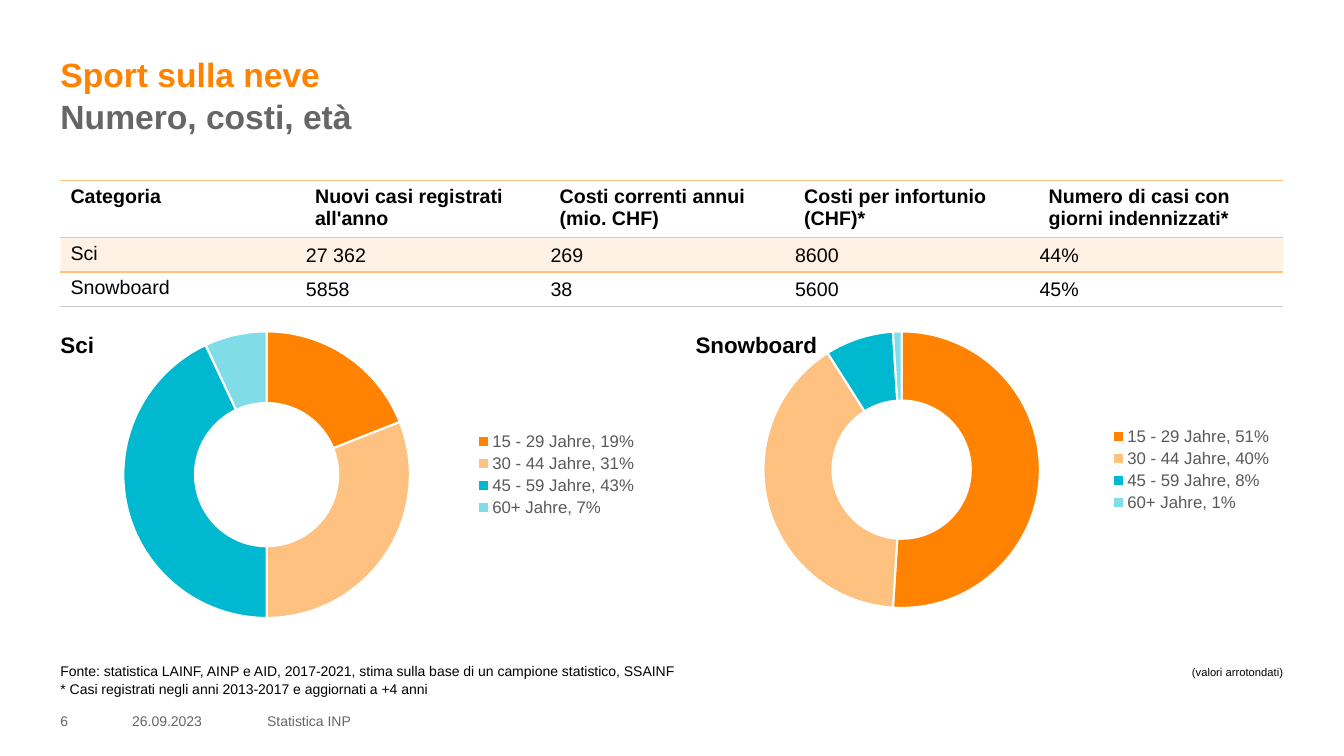
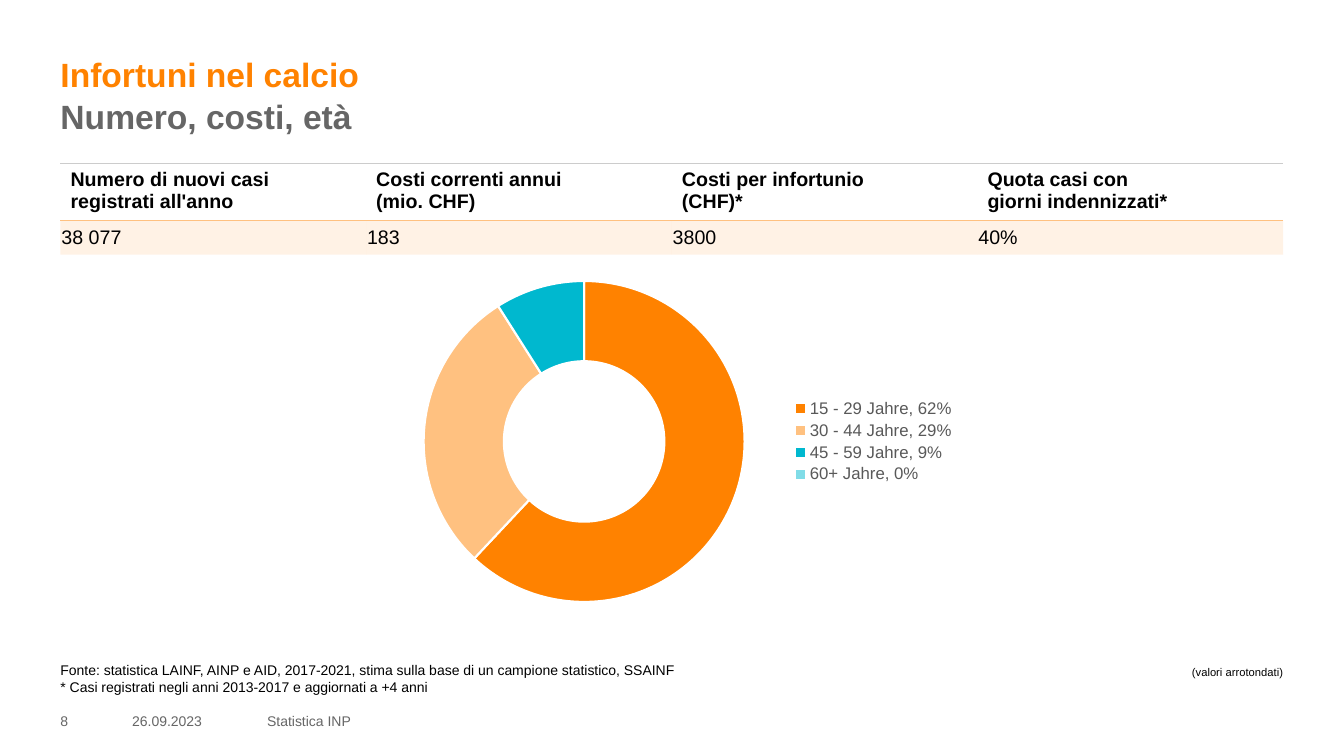
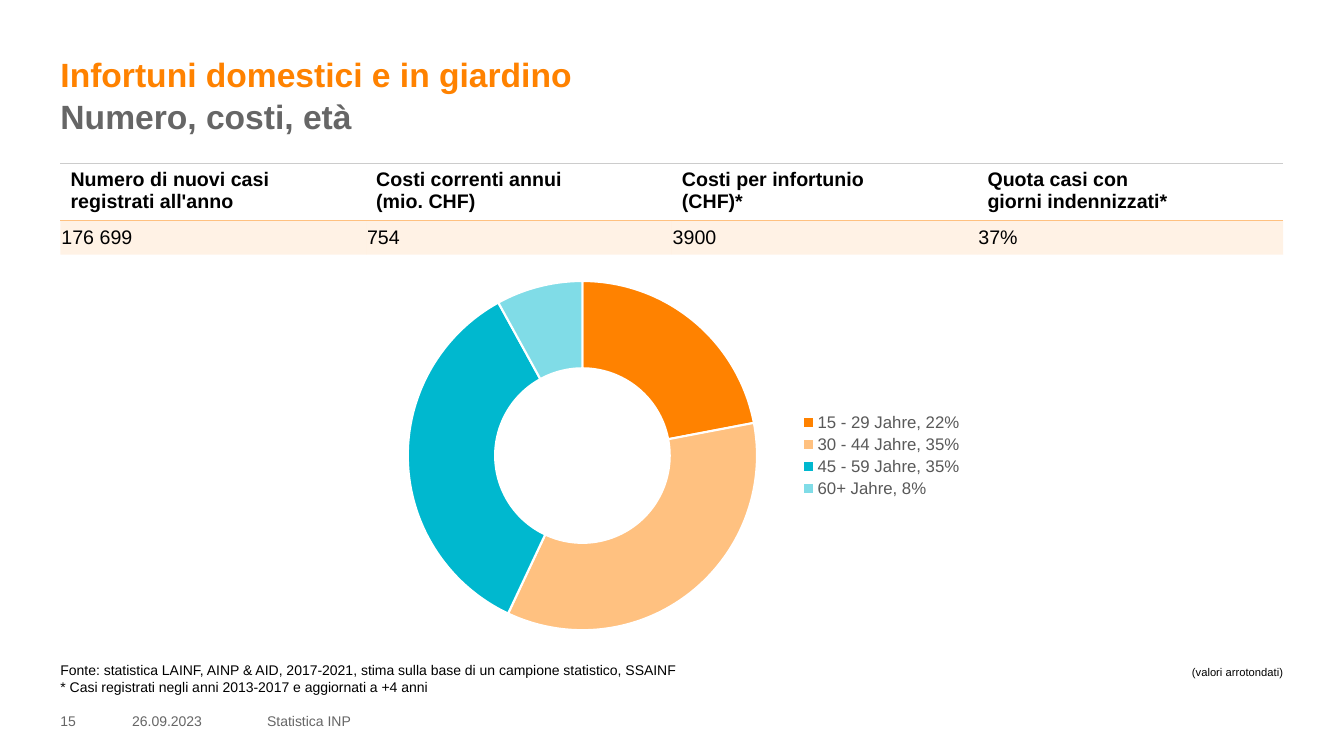
from lxml import etree
from pptx import Presentation
from pptx.chart.data import CategoryChartData
from pptx.dml.color import RGBColor
from pptx.enum.chart import XL_CHART_TYPE, XL_LEGEND_POSITION
from pptx.enum.text import MSO_ANCHOR, MSO_AUTO_SIZE, PP_ALIGN
from pptx.oxml.ns import qn
from pptx.util import Pt


def rgb(hex_color):
    return RGBColor.from_string(hex_color)


class Deck:
    FONT = "Arial"
    ORANGE, PEACH, TEAL, AQUA = "FF8200", "FFC180", "00B8CF", "80DCE7"
    BLACK, GREY, LEGEND_GREY = "000000", "666666", "595959"
    WHITE, RULE_GREY = "FFFFFF", "CCCCCC"
    LEFT, WIDTH = 43.2, 873.4
    HEADER_HEIGHT, ROW_HEIGHT = 39.4, 24.5
    AGES = ("15 - 29", "30 - 44", "45 - 59", "60+")

    def __init__(self):
        self.prs = Presentation()
        self.prs.slide_width, self.prs.slide_height = Pt(960), Pt(540)
        self.slide = None

    def font(self, font, size, color, bold=False):
        font.name, font.size, font.bold = self.FONT, Pt(size), bold
        font.color.rgb = rgb(color)

    def frame(self, frame, inset=(0, 0), anchor=MSO_ANCHOR.TOP, wrap=True):
        frame.margin_left = frame.margin_right = Pt(inset[0])
        frame.margin_top = frame.margin_bottom = Pt(inset[1])
        frame.vertical_anchor = anchor
        frame.word_wrap = wrap

    def place(self, shape, left, top, width, height):
        shape.left, shape.top = Pt(left), Pt(top)
        shape.width, shape.height = Pt(width), Pt(height)

    def new_slide(self, topic, number):
        """Start a slide with its title and footer."""
        self.slide = self.prs.slides.add_slide(self.prs.slide_layouts[5])
        title = self.slide.shapes.title
        self.place(title, self.LEFT, 37.5, self.WIDTH, 67.7)
        self.frame(title.text_frame)
        title.text_frame.auto_size = MSO_AUTO_SIZE.NONE
        title.text_frame.text = f"{topic}\vNumero, costi, età"
        heading = title.text_frame.paragraphs[0]
        heading.alignment, heading.line_spacing = PP_ALIGN.LEFT, 1.04
        for run, color in zip(heading.runs, (self.ORANGE, self.GREY)):
            self.font(run.font, 24, color, True)

        # Footer: page, date, subject
        for text, left, width in ((str(number), self.LEFT, 39.6),
                                  ("26.09.2023", 94.4, 85),
                                  ("Statistica INP", 190.8, 617.8)):
            self.text(text, left, 507.6, width, 14.4, color=self.GREY,
                      anchor=MSO_ANCHOR.MIDDLE)

    def text(self, text, left, top, width, height, size=10, color=BLACK, bold=False,
             align=PP_ALIGN.LEFT, spacing=1.0, **frame_style):
        box = self.slide.shapes.add_textbox(Pt(left), Pt(top), Pt(width), Pt(height))
        self.frame(box.text_frame, **frame_style)
        box.text_frame.text = text
        for paragraph in box.text_frame.paragraphs:
            paragraph.alignment, paragraph.line_spacing = align, spacing
            for run in paragraph.runs:
                self.font(run.font, size, color, bold)

    def source_lines(self, insurers, top):
        """Source lines and the rounding remark."""
        self.text(f"Fonte: statistica LAINF, {insurers}, 2017-2021, stima sulla base di un "
                  "campione statistico, SSAINF\n"
                  "* Casi registrati negli anni 2013-2017 e aggiornati a +4 anni",
                  self.LEFT, top, self.WIDTH, 30, spacing=1.05)
        self.text("(valori arrotondati)", 843.1, 471.6, 80.6, 17.3, size=8,
                  align=PP_ALIGN.RIGHT, inset=(7.2, 3.6), wrap=False)

    def border(self, cell, side, position, color):
        line = etree.Element(qn(f"a:{side}"), w=str(int(Pt(1))))
        if color:
            fill = etree.SubElement(line, qn("a:solidFill"))
            etree.SubElement(fill, qn("a:srgbClr"), val=color)
        else:
            etree.SubElement(line, qn("a:noFill"))
        cell._tc.get_or_add_tcPr().insert(position, line)

    def table(self, top, rows, rules):
        """Rules are the colours of the horizontal lines, from the top down."""
        columns = len(rows[0])
        height = self.HEADER_HEIGHT + self.ROW_HEIGHT * (len(rows) - 1)
        table = self.slide.shapes.add_table(
            len(rows), columns, Pt(self.LEFT), Pt(top), Pt(self.WIDTH), Pt(height)).table
        table.first_row = table.horz_banding = False
        for column in table.columns:
            column.width = Pt(self.WIDTH / columns)
        for r, row in enumerate(rows):
            table.rows[r].height = Pt(self.ROW_HEIGHT if r else self.HEADER_HEIGHT)
            for c, text in enumerate(row):
                self.cell(table.cell(r, c), text, r, rules[r:r + 2])

    def cell(self, cell, text, row, rules):
        is_value = text[0].isdigit()
        cell.margin_left = cell.margin_right = Pt(0.7 if is_value else 7.2)
        cell.margin_top = Pt(0.7 if is_value else 3.6)
        cell.margin_bottom = Pt(0 if is_value else 3.6)
        cell.vertical_anchor = MSO_ANCHOR.MIDDLE if is_value else MSO_ANCHOR.TOP
        cell.text_frame.text = text
        for run in cell.text_frame.paragraphs[0].runs:
            self.font(run.font, 14, self.BLACK, row == 0)

        # White header, tinted odd rows, clear even rows
        if row and row % 2 == 0:
            cell.fill.background()
        else:
            cell.fill.solid()
            cell.fill.fore_color.rgb = rgb(self.PEACH if row else self.WHITE)
            if row:
                tint = cell._tc.tcPr.find(".//" + qn("a:srgbClr"))
                etree.SubElement(tint, qn("a:alpha"), val="20000")
        for position, (side, color) in enumerate(
                zip(("lnL", "lnR", "lnT", "lnB"), (None, None, *rules))):
            self.border(cell, side, position, color)

    def age_chart(self, shares, left, top, width, height):
        data = CategoryChartData()
        data.categories = [f"{age} Jahre, {share}%" for age, share in zip(self.AGES, shares)]
        data.add_series("Series 1", shares)
        chart = self.slide.shapes.add_chart(
            XL_CHART_TYPE.DOUGHNUT, Pt(left), Pt(top), Pt(width), Pt(height), data).chart
        self.font(chart.font, 10, self.BLACK)
        chart.has_title = False
        chart.has_legend = True
        chart.legend.position = XL_LEGEND_POSITION.RIGHT
        chart.legend.include_in_layout = False
        self.font(chart.legend.font, 12, self.LEGEND_GREY)
        ring = chart.plots[0]
        ring.vary_by_categories = True
        ring._element.find(qn("c:holeSize")).set("val", "55")
        for i, color in enumerate((self.ORANGE, self.PEACH, self.TEAL, self.AQUA)):
            slice_format = ring.series[0].points[i].format
            slice_format.fill.solid()
            slice_format.fill.fore_color.rgb = rgb(color)
            slice_format.line.color.rgb = rgb(self.WHITE)
            slice_format.line.width = Pt(1.5)


def snow_sports(deck):
    deck.new_slide("Sport sulla neve", 6)
    for sport, shares, left, height in (("Sci", (19, 31, 43, 7), deck.LEFT, 224.6),
                                        ("Snowboard", (51, 40, 8, 1), 496.8, 217.4)):
        deck.age_chart(shares, left, 226.8, 419.8, height)
        deck.text(sport, left, 236.2, 414, 51, size=16, bold=True)
    deck.table(128.9, (
        ("Categoria", "Nuovi casi registrati all'anno", "Costi correnti annui (mio. CHF)",
         "Costi per infortunio (CHF)*", "Numero di casi con giorni indennizzati*"),
        ("Sci", "27 362", "269", "8600", "44%"),
        ("Snowboard", "5858", "38", "5600", "45%"),
    ), (deck.PEACH, deck.PEACH, deck.PEACH, deck.RULE_GREY))
    deck.source_lines("AINP e AID", 473)


def single_activity(deck, topic, number, figures, shares, chart_area, insurers):
    deck.new_slide(topic, number)
    deck.table(116.6, (
        ("Numero di nuovi casi registrati all'anno", "Costi correnti annui \v(mio. CHF)",
         "Costi per infortunio \v(CHF)*", "Quota casi con \vgiorni indennizzati*"),
        figures,
    ), (deck.RULE_GREY, deck.PEACH, None))
    deck.age_chart(shares, *chart_area)
    deck.source_lines(insurers, 471.6)


def main():
    deck = Deck()
    snow_sports(deck)
    single_activity(deck, "Infortuni nel calcio", 8, ("38 077", "183", "3800", "40%"),
                    (62, 29, 9, 0), (270, 190.8, 419.8, 249.1), "AINP e AID")
    single_activity(deck, "Infortuni domestici e in giardino", 15,
                    ("176 699", "754", "3900", "37%"),
                    (22, 35, 35, 8), (262, 190.8, 433.4, 269.3), "AINP & AID")
    deck.prs.save("out.pptx")


if __name__ == "__main__":
    main()
